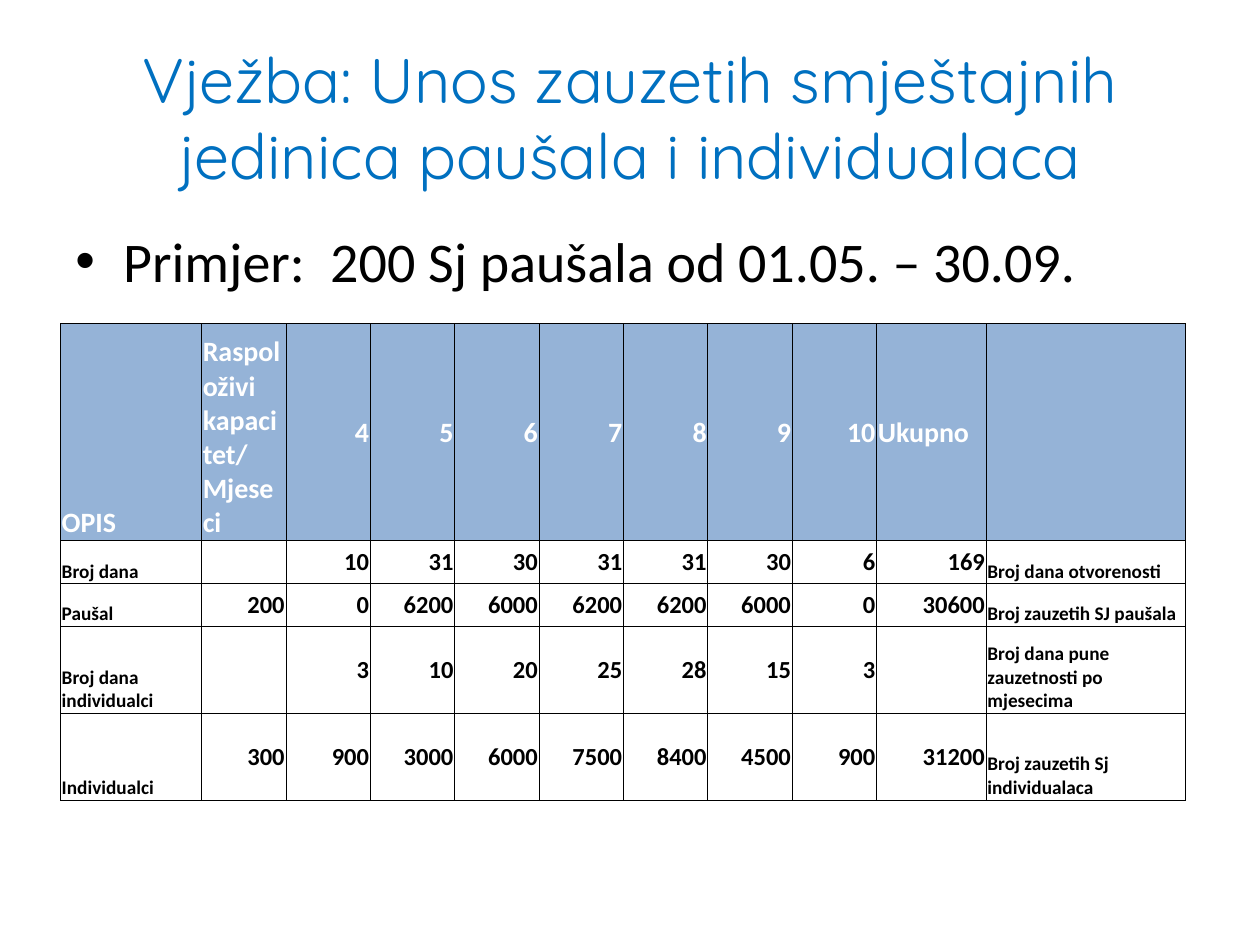
from lxml.etree import SubElement
from pptx import Presentation
from pptx.dml.color import RGBColor
from pptx.enum.text import MSO_ANCHOR as Anchor, PP_ALIGN as Align
from pptx.oxml.ns import qn
from pptx.util import Inches, Pt

BLACK, WHITE, BLUE, HEADER_FILL = "000000", "FFFFFF", "0070C0", "95B3D7"
COLUMN_WIDTHS = [1.12] + [0.67] * 8 + [0.87, 1.58]
ROW_HEIGHTS = [1.72, 0.34, 0.34, 0.69, 0.69]
ROWS = [
    ["OPIS", "Raspoloživi kapacitet/ Mjeseci", "4", "5", "6", "7", "8", "9", "10", "Ukupno", ""],
    ["Broj dana", "", "10", "31", "30", "31", "31", "30", "6", "169", "Broj dana otvorenosti"],
    ["Paušal", "200", "0", "6200", "6000", "6200", "6200", "6000", "0", "30600",
     "Broj zauzetih SJ paušala"],
    ["Broj dana individualci", "", "3", "10", "20", "25", "28", "15", "3", "",
     "Broj dana pune zauzetnosti po mjesecima"],
    ["Individualci", "300", "900", "3000", "6000", "7500", "8400", "4500", "900", "31200",
     "Broj zauzetih Sj individualaca"],
]


def color(value):
    """Return the colour for a hex string."""
    return RGBColor.from_string(value)


def set_font(paragraph, name, size, value, bold=False):
    """Set the font of a whole paragraph."""
    font = paragraph.font
    font.name, font.size, font.bold = name, Pt(size), bold
    font.color.rgb = color(value)


def add_text_box(slide, box, text, anchor):
    """Add a wrapping text box and return its paragraph."""
    frame = slide.shapes.add_textbox(*map(Inches, box)).text_frame
    frame.word_wrap = True
    frame.vertical_anchor = anchor
    paragraph = frame.paragraphs[0]
    paragraph.text = text
    return paragraph


def add_title(slide, box):
    """Add the centred slide title."""
    text = "Vježba: Unos zauzetih smještajnih jedinica paušala i individualaca"
    paragraph = add_text_box(slide, box, text, Anchor.MIDDLE)
    paragraph.alignment = Align.CENTER
    set_font(paragraph, "Quicksand", 36, BLUE)


def add_example(slide, box):
    """Add the bulleted example line."""
    text = "Primjer:  200 Sj paušala od 01.05. – 30.09."
    paragraph = add_text_box(slide, box, text, Anchor.TOP)
    properties = paragraph._p.get_or_add_pPr()
    properties.set("marL", str(Inches(0.38)))
    properties.set("indent", str(-Inches(0.38)))
    SubElement(properties, qn("a:buFont"), typeface="Arial")
    SubElement(properties, qn("a:buChar"), char="•")
    set_font(paragraph, "Calibri", 32, BLACK)


def set_borders(cell):
    """Draw thin black lines on all four sides of a cell."""
    properties = cell._tc.get_or_add_tcPr()
    for position, side in enumerate(("lnL", "lnR", "lnT", "lnB")):
        line = SubElement(properties, qn(f"a:{side}"), w=str(Pt(0.5)))
        fill = SubElement(line, qn("a:solidFill"))
        SubElement(fill, qn("a:srgbClr"), val=BLACK)
        properties.insert(position, line)


def fill_cell(cell, text, is_header):
    """Write and format one table cell."""
    is_number = text.isdigit()
    cell.margin_left = cell.margin_right = cell.margin_top = Inches(0.01)
    cell.margin_bottom = 0
    is_middle = is_number or text == "Ukupno"
    cell.vertical_anchor = Anchor.MIDDLE if is_middle else Anchor.BOTTOM
    if is_header:
        cell.fill.solid()
        cell.fill.fore_color.rgb = color(HEADER_FILL)
    else:
        cell.fill.background()
    set_borders(cell)
    paragraph = cell.text_frame.paragraphs[0]
    paragraph.text = text
    paragraph.alignment = Align.RIGHT if is_number else Align.LEFT
    size = 16 if is_header else 14 if is_number else 11
    set_font(paragraph, "Calibri", size, WHITE if is_header else BLACK, bold=True)


def add_occupancy_table(slide, box):
    """Add the table of occupied units by month."""
    shape = slide.shapes.add_table(len(ROWS), len(COLUMN_WIDTHS), *map(Inches, box))
    table = shape.table
    table.first_row = table.horz_banding = False
    for column, width in zip(table.columns, COLUMN_WIDTHS):
        column.width = Inches(width)
    for row, height in zip(table.rows, ROW_HEIGHTS):
        row.height = Inches(height)
    for row_index, texts in enumerate(ROWS):
        for column_index, text in enumerate(texts):
            fill_cell(table.cell(row_index, column_index), text, row_index == 0)


def main():
    """Build and save the presentation."""
    presentation = Presentation()
    presentation.slide_width, presentation.slide_height = Inches(10), Inches(7.5)
    slide = presentation.slides.add_slide(presentation.slide_layouts[6])
    add_title(slide, (0.5, 0.3, 9, 1.25))
    add_example(slide, (0.5, 1.75, 9, 4.95))
    add_occupancy_table(slide, (0.48, 2.57, sum(COLUMN_WIDTHS), sum(ROW_HEIGHTS)))
    presentation.save("out.pptx")


if __name__ == "__main__":
    main()
